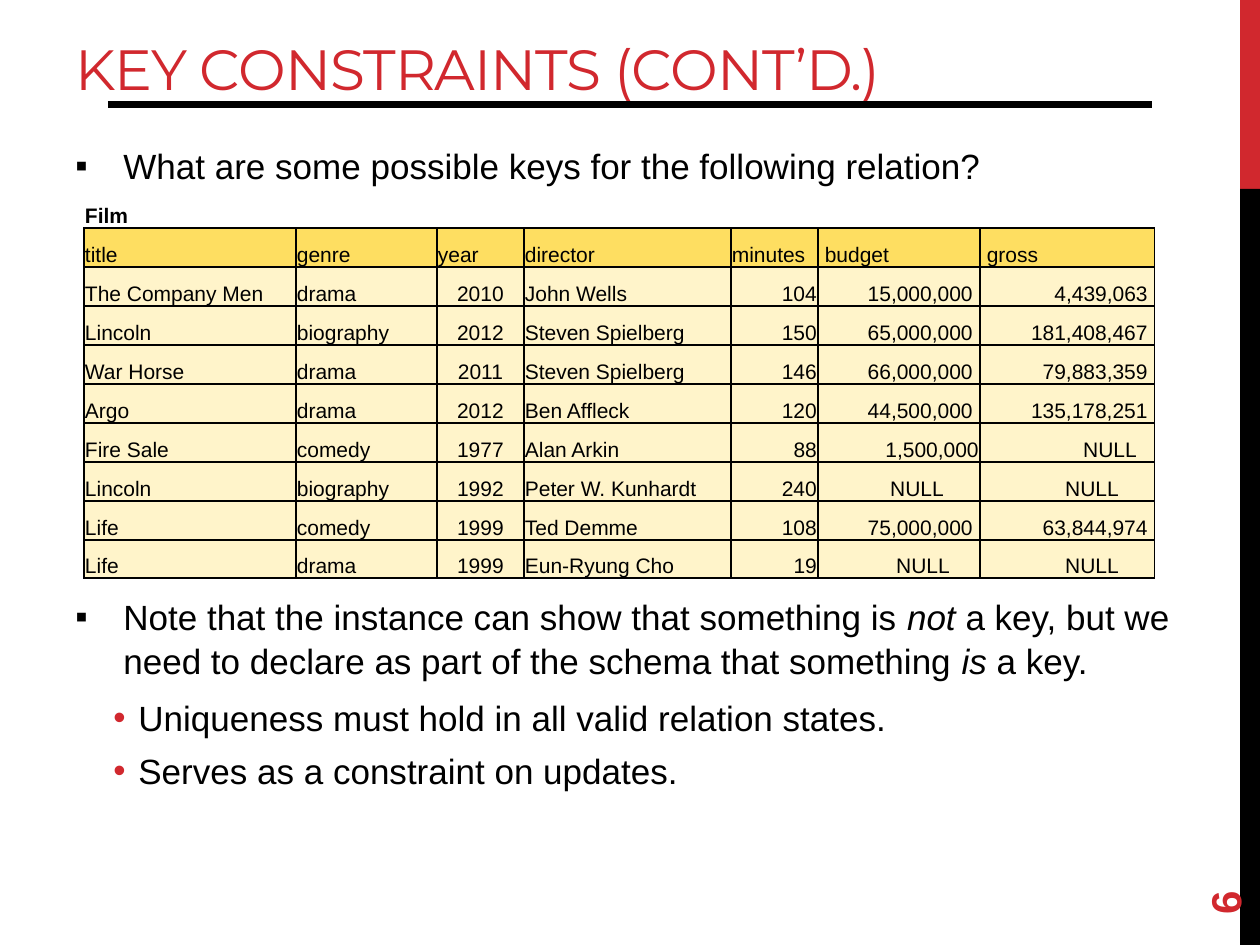
from dataclasses import dataclass

from lxml import etree
from pptx import Presentation
from pptx.dml.color import RGBColor
from pptx.enum.shapes import MSO_CONNECTOR, MSO_SHAPE
from pptx.enum.text import MSO_ANCHOR, PP_ALIGN
from pptx.oxml.ns import qn
from pptx.util import Emu, Pt

RECT = MSO_SHAPE.RECTANGLE
LINE = MSO_CONNECTOR.STRAIGHT
TOP, MIDDLE, BOTTOM = MSO_ANCHOR.TOP, MSO_ANCHOR.MIDDLE, MSO_ANCHOR.BOTTOM
LEFT, CENTER, RIGHT = PP_ALIGN.LEFT, PP_ALIGN.CENTER, PP_ALIGN.RIGHT
RED, BLACK, WHITE = "D1282E", "000000", "FFFFFF"
GOLD, CREAM = "FEDE61", "FFF4CA"
SCALE = 914400 / 126


@dataclass
class Box:
    x: int
    y: int
    w: int
    h: int


@dataclass
class Style:
    size: float
    hue: str = BLACK
    font: str = "Arial"
    bold: bool = False


@dataclass
class Point:
    runs: list[tuple[str, bool]]
    level: int
    left: int
    hang: int
    before: float
    after: float
    mark: str
    hue: str


WIDTHS = [212, 141, 87, 207, 87, 162, 175]
HEIGHTS = [39] * 9 + [38]
ALIGNS = [LEFT, LEFT, CENTER, LEFT, RIGHT, RIGHT, RIGHT]
HEAD = ["title", "genre", "year", "director", "minutes", "budget", "gross"]
FILMS = [
    ["The Company Men", "drama", "2010", "John Wells", "104", "15,000,000", "4,439,063"],
    ["Lincoln", "biography", "2012", "Steven Spielberg", "150", "65,000,000", "181,408,467"],
    ["War Horse", "drama", "2011", "Steven Spielberg", "146", "66,000,000", "79,883,359"],
    ["Argo", "drama", "2012", "Ben Affleck", "120", "44,500,000", "135,178,251"],
    ["Fire Sale", "comedy", "1977", "Alan Arkin", "88", "1,500,000", "NULL"],
    ["Lincoln", "biography", "1992", "Peter W. Kunhardt", "240", "NULL", "NULL"],
    ["Life", "comedy", "1999", "Ted Demme", "108", "75,000,000", "63,844,974"],
    ["Life", "drama", "1999", "Eun-Ryung Cho", "19", "NULL", "NULL"],
]
MONEY = 5
PADS = {(4, 5): 1, (4, 6): 18, (5, 5): 36, (5, 6): 36, (7, 5): 30, (7, 6): 36}
POINTS = [
    Point([("What are some possible keys for the following relation?", False)],
          0, 48, 48, 4.8, 4.8, "▪", BLACK),
    Point([("Note that the instance can show that something is ", False),
           ("not", True),
           (" a key, but we need to declare as part of the schema that something ", False),
           ("is", True), (" a key.", False)],
          0, 48, 48, 228, 4.8, "▪", BLACK),
    Point([("Uniqueness must hold in all valid relation states.", False)],
          1, 63, 25, 2.4, 2.4, "•", RED),
    Point([("Serves as a constraint on updates.", False)],
          1, 63, 25, 2.4, 2.4, "•", RED),
]


def px(num: int) -> Emu:
    return Emu(round(num * SCALE))


def tint(hue: str) -> RGBColor:
    return RGBColor.from_string(hue)


def add_run(para, text: str, style: Style, slant: bool = False):
    run = para.add_run()
    run.text = text
    font = run.font
    font.size, font.name = Pt(style.size), style.font
    font.bold, font.italic = style.bold, slant
    font.color.rgb = tint(style.hue)
    return run


def add_bar(slide, box: Box, hue: str) -> None:
    bar = slide.shapes.add_shape(RECT, px(box.x), px(box.y), px(box.w), px(box.h))
    bar.shadow.inherit = False
    bar.fill.solid()
    bar.fill.fore_color.rgb = tint(hue)
    bar.line.fill.background()


def add_rule(slide, left: int, right: int, y: int) -> None:
    rule = slide.shapes.add_connector(LINE, px(left), px(y), px(right), px(y))
    rule.line.color.rgb = tint(BLACK)
    rule.line.width = Pt(4)
    etree.SubElement(rule.element.spPr, qn("a:effectLst"))


def add_text(slide, box: Box, anchor):
    shape = slide.shapes.add_textbox(px(box.x), px(box.y), px(box.w), px(box.h))
    shape.text_frame.word_wrap = True
    shape.text_frame.vertical_anchor = anchor
    return shape


def add_point(para, point: Point, style: Style) -> None:
    para.level = point.level
    para.line_spacing = 1.05
    para.space_before, para.space_after = Pt(point.before), Pt(point.after)
    props = para._p.get_or_add_pPr()
    props.set("marL", str(px(point.left)))
    props.set("indent", str(-px(point.hang)))
    ink = etree.SubElement(props, qn("a:buClr"))
    etree.SubElement(ink, qn("a:srgbClr"), val=point.hue)
    etree.SubElement(props, qn("a:buFont"), typeface="Arial")
    etree.SubElement(props, qn("a:buChar"), char=point.mark)
    for text, slant in point.runs:
        add_run(para, text, style, slant)


def set_edges(cell, hues: dict[str, str]) -> None:
    props = cell._tc.get_or_add_tcPr()
    for spot, side in enumerate("LRTB"):
        edge = etree.Element(qn(f"a:ln{side}"), w=str(Pt(1)))
        fill = etree.SubElement(edge, qn("a:solidFill"))
        etree.SubElement(fill, qn("a:srgbClr"), val=hues.get(side, BLACK))
        props.insert(spot, edge)


def fill_cell(cell, text: str, style: Style, align=LEFT, left: int = 1, right: int = 1) -> None:
    cell.margin_left, cell.margin_right = px(left), px(right)
    cell.margin_top, cell.margin_bottom = px(1), px(0)
    cell.vertical_anchor = BOTTOM
    para = cell.text_frame.paragraphs[0]
    para.alignment = align
    add_run(para, text, style)


def paint(cell, hue: str) -> None:
    cell.fill.solid()
    cell.fill.fore_color.rgb = tint(hue)
    set_edges(cell, {})


def add_films(slide, x: int, y: int) -> None:
    frame = slide.shapes.add_table(len(HEIGHTS), len(WIDTHS), px(x), px(y),
                                   px(sum(WIDTHS)), px(sum(HEIGHTS)))
    table = frame.table
    table.first_row = table.horz_banding = False
    for col, width in zip(table.columns, WIDTHS):
        col.width = px(width)
    for row, height in zip(table.rows, HEIGHTS):
        row.height = px(height)
    for col in range(len(WIDTHS)):
        cell = table.cell(0, col)
        cell.fill.background()
        set_edges(cell, {"L": WHITE, "R": WHITE, "T": WHITE})
    table.cell(0, 0).merge(table.cell(0, len(WIDTHS) - 1))
    fill_cell(table.cell(0, 0), "Film", Style(12, bold=True))
    plain = Style(12)
    for col, text in enumerate(HEAD):
        cell = table.cell(1, col)
        fill_cell(cell, text, plain, left=7 if col >= MONEY else 1)
        paint(cell, GOLD)
    for row, film in enumerate(FILMS):
        for col, text in enumerate(film):
            cell = table.cell(row + 2, col)
            pad = PADS.get((row, col), 7 if col >= MONEY else 1)
            fill_cell(cell, text, plain, ALIGNS[col], right=pad)
            paint(cell, CREAM)


def main() -> None:
    deck = Presentation()
    deck.slide_width, deck.slide_height = px(1260), px(945)
    slide = deck.slides.add_slide(deck.slide_layouts[6])
    add_bar(slide, Box(1240, 0, 20, 189), RED)
    add_bar(slide, Box(1240, 189, 20, 756), BLACK)
    add_rule(slide, 108, 1152, 105)

    title = add_text(slide, Box(63, 21, 1176, 84), BOTTOM).text_frame
    title.margin_bottom = px(3)
    run = add_run(title.paragraphs[0], "KEY CONSTRAINTS (CONT’D.)", Style(32.4, RED, "Montserrat"))
    run.font._element.set("spc", "-60")

    page = add_text(slide, Box(1134, 811, 181, 50), MIDDLE)
    page.rotation = 270
    add_run(page.text_frame.paragraphs[0], "6", Style(24, RED, bold=True))

    body = add_text(slide, Box(63, 136, 1134, 708), TOP).text_frame
    for spot, point in enumerate(POINTS):
        para = body.add_paragraph() if spot else body.paragraphs[0]
        add_point(para, point, Style(20))

    add_films(slide, 84, 189)
    deck.save("out.pptx")


if __name__ == "__main__":
    main()
